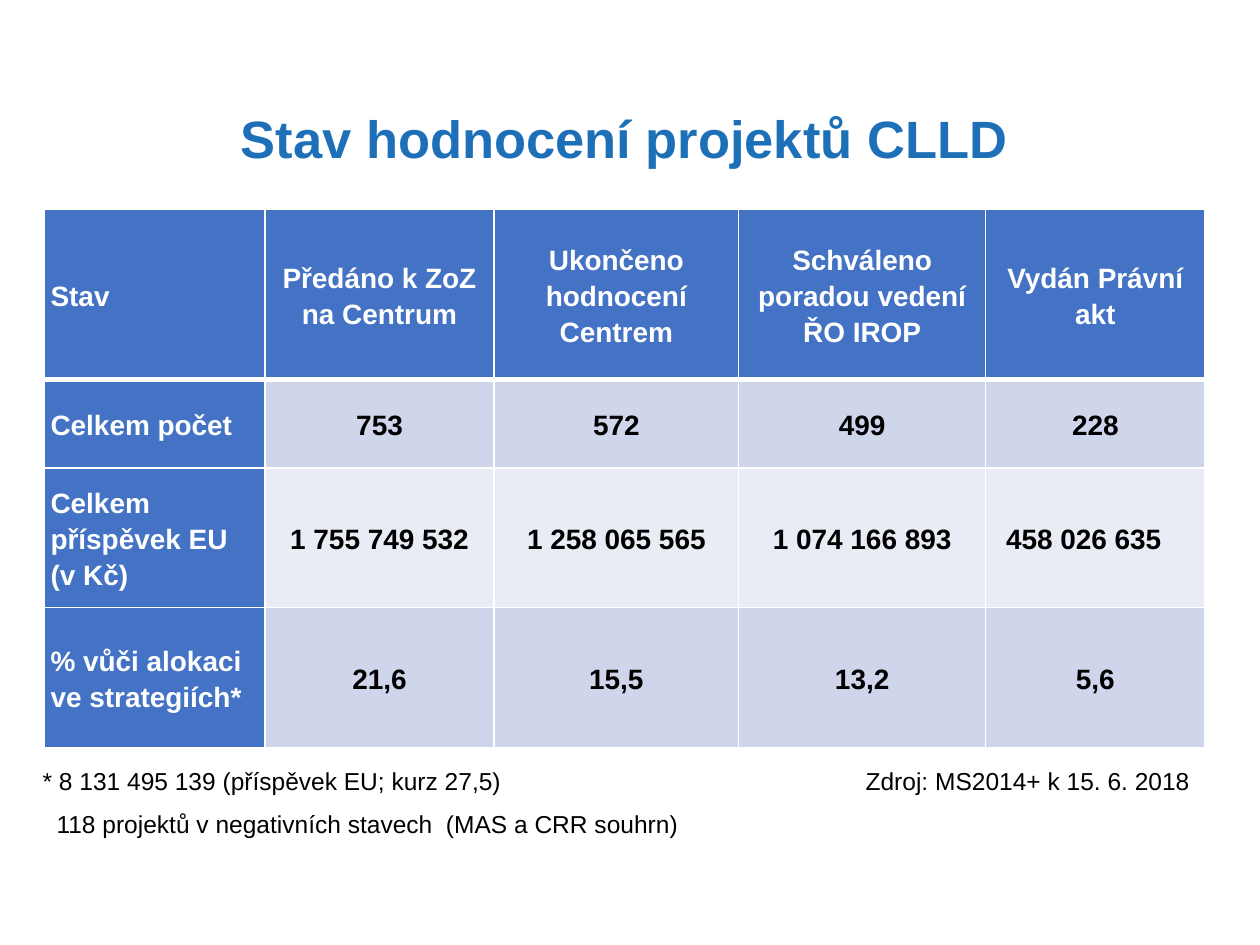
"""Build the slide on the state of evaluation of CLLD projects."""
from dataclasses import dataclass

import pptx
import pptx.dml.color
import pptx.enum.text
import pptx.oxml
import pptx.oxml.ns
import pptx.util
from pptx.util import Cm

FONT = "Arial"
WHITE, BLACK, TITLE_BLUE, HEADER_BLUE = "FFFFFF", "000000", "1D70B8", "4472C4"
BAND_COLOURS = ("CFD5EA", "E9EBF5")
CENTER = pptx.enum.text.PP_ALIGN.CENTER
LEFT = pptx.enum.text.PP_ALIGN.LEFT

COLUMN_WIDTHS = (4.45, 4.62, 4.93, 4.98, 4.42)
ROW_HEIGHTS = (3.43, 1.78, 2.82, 2.82)
ROWS = (
    ("Stav", "Předáno k ZoZ na Centrum", "Ukončeno hodnocení Centrem",
     "Schváleno poradou vedení ŘO IROP", "Vydán Právní akt"),
    ("Celkem počet", "753", "572", "499", "228"),
    ("Celkem příspěvek EU (v Kč)", "1 755 749 532", "1 258 065 565",
     "1 074 166 893", "458 026 635"),
    ("% vůči alokaci ve strategiích*", "21,6", "15,5", "13,2", "5,6"),
)


@dataclass
class Label:
    text: str
    left: float
    top: float
    width: float
    height: float = 0.86
    size: int = 14
    colour: str = BLACK
    bold: bool = False
    align: pptx.enum.text.PP_ALIGN = LEFT
    wrap: bool = True


LABELS = (
    Label("Stav hodnocení projektů CLLD", 1.68, 2.01, 21.82, 1.55,
          size=30, colour=TITLE_BLUE, bold=True, align=CENTER),
    Label("* 8 131 495 139 (příspěvek EU; kurz 27,5)", 0.61, 15.32, 9.8, wrap=False),
    Label("Zdroj: MS2014+ k 15. 6. 2018", 17.2, 15.32, 7.06, wrap=False),
    Label("118 projektů v negativních stavech  (MAS a CRR souhrn)", 0.89, 16.18, 13.92),
)


def rgb(colour: str) -> pptx.dml.color.RGBColor:
    return pptx.dml.color.RGBColor.from_string(colour)


def format_paragraph(paragraph, size: int, colour: str, bold: bool, align) -> None:
    paragraph.alignment = align
    for run in paragraph.runs:
        run.font.name = FONT
        run.font.size = pptx.util.Pt(size)
        run.font.bold = bold
        run.font.color.rgb = rgb(colour)


def add_label(slide, label: Label) -> None:
    shape = slide.shapes.add_textbox(
        Cm(label.left), Cm(label.top), Cm(label.width), Cm(label.height))
    text_frame = shape.text_frame
    text_frame.text = label.text
    text_frame.word_wrap = label.wrap
    text_frame.auto_size = pptx.enum.text.MSO_AUTO_SIZE.SHAPE_TO_FIT_TEXT
    format_paragraph(text_frame.paragraphs[0], label.size, label.colour,
                     label.bold, label.align)


def add_border(cell, side: str, points: int) -> None:
    cell._tc.get_or_add_tcPr().append(pptx.oxml.parse_xml(
        f'<a:ln{side} {pptx.oxml.ns.nsdecls("a")} w="{pptx.util.Pt(points)}">'
        f'<a:solidFill><a:srgbClr val="{WHITE}"/></a:solidFill></a:ln{side}>'))


def format_cell(cell, text: str, row: int, column: int) -> None:
    is_heading = row == 0 or column == 0
    cell.text_frame.text = text
    cell.vertical_anchor = pptx.enum.text.MSO_ANCHOR.MIDDLE
    cell.margin_left = cell.margin_right = Cm(0.13)
    cell.margin_top = cell.margin_bottom = Cm(0)
    paragraph = cell.text_frame.paragraphs[0]
    paragraph.line_spacing = 1.15
    format_paragraph(paragraph, 16, WHITE if is_heading else BLACK, True,
                     CENTER if column else LEFT)
    thick_side = {0: "B", 1: "T"}.get(row)
    for side in "LRTB":
        add_border(cell, side, 3 if side == thick_side else 1)
    cell.fill.solid()
    cell.fill.fore_color.rgb = rgb(HEADER_BLUE if is_heading else BAND_COLOURS[(row - 1) % 2])


def add_state_table(slide) -> None:
    table = slide.shapes.add_table(
        len(ROW_HEIGHTS), len(COLUMN_WIDTHS), Cm(0.89), Cm(4.22),
        Cm(sum(COLUMN_WIDTHS)), Cm(sum(ROW_HEIGHTS))).table
    for column, width in zip(table.columns, COLUMN_WIDTHS):
        column.width = Cm(width)
    for row, height in zip(table.rows, ROW_HEIGHTS):
        row.height = Cm(height)
    for row_index, texts in enumerate(ROWS):
        for column_index, text in enumerate(texts):
            format_cell(table.cell(row_index, column_index), text, row_index, column_index)
    table.cell(2, 4).margin_right = Cm(0.6)


def main() -> None:
    presentation = pptx.Presentation()
    presentation.slide_width = Cm(25.4)
    presentation.slide_height = Cm(19.05)
    slide = presentation.slides.add_slide(presentation.slide_layouts[6])
    add_state_table(slide)
    for label in LABELS:
        add_label(slide, label)
    presentation.save("out.pptx")


if __name__ == "__main__":
    main()
